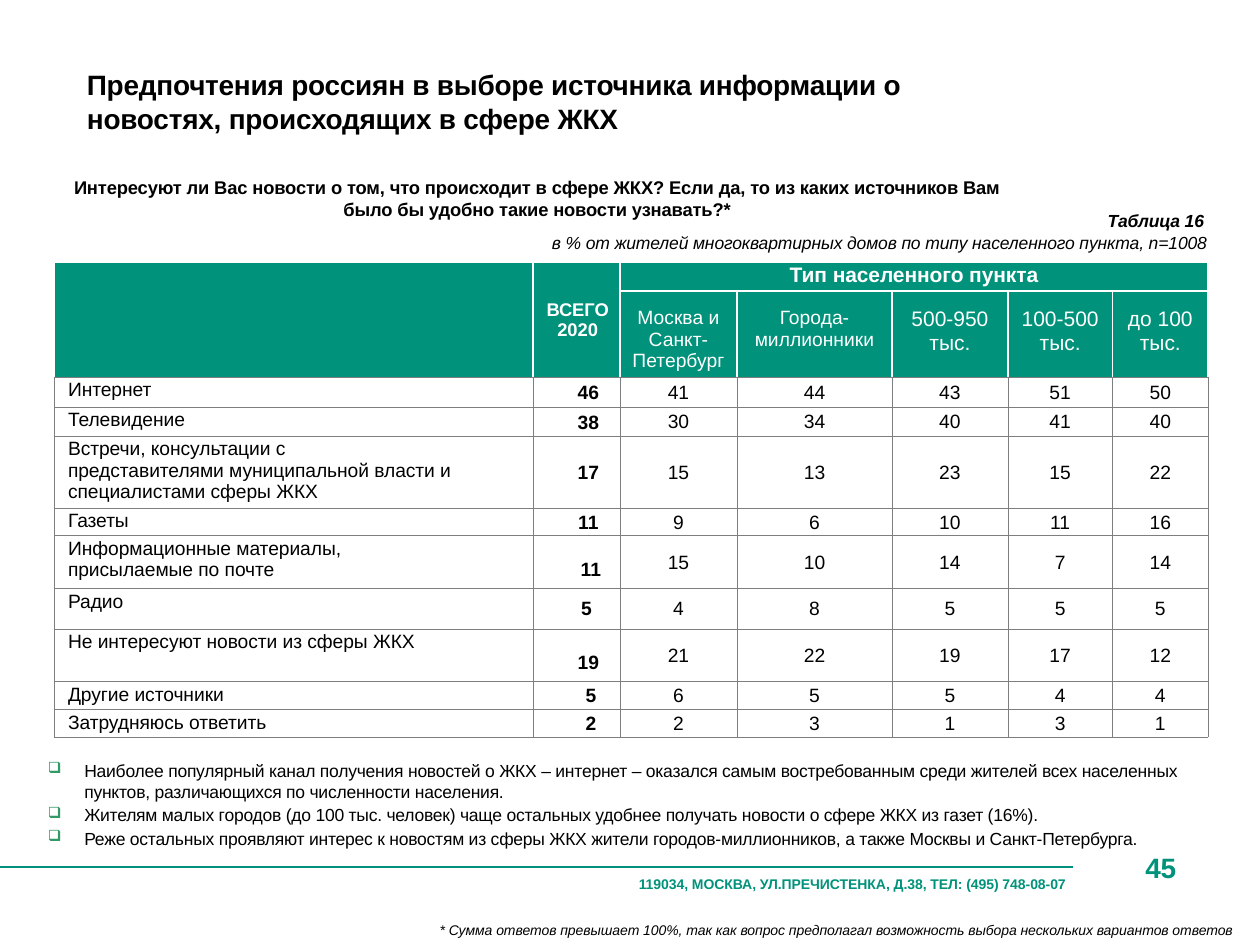
from dataclasses import dataclass

from lxml.etree import SubElement
from pptx import Presentation
from pptx.dml.color import RGBColor
from pptx.enum.shapes import MSO_CONNECTOR
from pptx.enum.text import MSO_ANCHOR, PP_ALIGN
from pptx.oxml.ns import qn
from pptx.util import Inches, Pt

GREEN, WHITE, BLACK, GREY = "00927A", "FFFFFF", "000000", "7E7E7E"


@dataclass
class Look:
    size: float
    color: str = BLACK
    bold: bool = False
    italic: bool = False
    center: bool = False
    indent: float = 0.01
    track: int = 0  # hundredths of a point


@dataclass
class Box:
    left: float
    top: float
    width: float
    height: float
    text: str
    look: Look
    inset: float = 0


@dataclass
class Row:
    label: str
    total: int
    shares: list[int]
    height: float
    drop: float = 0.02  # top inset of the total
    shift: float = 0.19  # left indent of the total
    right: float = 0  # right inset of the label


BOXES = [
    Box(0.68, 0.51, 6.61, 0.56,
        "Предпочтения россиян в выборе источника информации о "
        "новостях, происходящих в сфере ЖКХ",
        Look(16, bold=True, track=-10), 0.03),
    Box(9.05, 6.75, 0.33, 0.28, "45",
        Look(16, GREEN, bold=True, indent=0.04, track=-10)),
    Box(5.06, 6.95, 3.48, 0.15,
        "119034, МОСКВА, УЛ.ПРЕЧИСТЕНКА, Д.38, ТЕЛ: (495) 748-08-07",
        Look(8, GREEN, bold=True, track=-5)),
    Box(3.48, 7.31, 6.43, 0.15,
        "* Сумма ответов превышает 100%, так как вопрос предполагал "
        "возможность выбора нескольких вариантов ответов",
        Look(8, italic=True, track=-5)),
    Box(8.78, 1.66, 0.81, 0.18, "Таблица 16",
        Look(10, bold=True, italic=True, track=-5), 0.01),
    Box(4.37, 1.83, 5.22, 0.18,
        "в % от жителей многоквартирных домов по типу населенного пункта, n=1008",
        Look(10, italic=True, track=-5), 0.01),
    Box(0.5, 1.37, 7.53, 0.38,
        "Интересуют ли Вас новости о том, что происходит в сфере ЖКХ? "
        "Если да, то из каких источников Вам\n"
        "было бы удобно такие новости узнавать?*",
        Look(10.5, bold=True, center=True, indent=0, track=-5), 0.03),
]

NOTES = Box(
    0.36, 6.02, 9.13, 0.9,
    "Наиболее популярный канал получения новостей о ЖКХ – интернет – оказался "
    "самым востребованным среди жителей всех населенных пунктов, "
    "различающихся по численности населения.\n"
    "Жителям малых городов (до 100 тыс. человек) чаще остальных удобнее "
    "получать новости о сфере ЖКХ из газет (16%).\n"
    "Реже остальных проявляют интерес к новостям из сферы ЖКХ жители "
    "городов-миллионников, а также Москвы и Санкт-Петербурга.",
    Look(10, indent=0.31, track=-10), 0.01)

WIDTHS = [3.8, 0.69, 0.93, 1.23, 0.92, 0.83, 0.76]
HEADS = [0.23, 0.68]
TOWNS = [("Москва и Санкт-Петербург", 11), ("Города-миллионники", 11),
         ("500-950 тыс.", 12), ("100-500 тыс.", 12), ("до 100 тыс.", 12)]
ROWS = [
    Row("Интернет", 46, [41, 44, 43, 51, 50], 0.24),
    Row("Телевидение", 38, [30, 34, 40, 41, 40], 0.23),
    Row("Встречи, консультации с\nпредставителями муниципальной власти и "
        "специалистами сферы ЖКХ", 17, [15, 13, 23, 15, 22], 0.57),
    Row("Газеты", 11, [9, 6, 10, 11, 16], 0.22, 0.01),
    Row("Информационные материалы, присылаемые по почте", 11,
        [15, 10, 14, 7, 14], 0.42, 0.12, 0.23, 1),
    Row("Радио", 5, [4, 8, 5, 5, 5], 0.32, 0, 0.16),
    Row("Не интересуют новости из сферы ЖКХ", 19,
        [21, 22, 19, 17, 12], 0.42, 0.12),
    Row("Другие источники", 5, [6, 5, 5, 4, 4], 0.22, 0.01, 0.23),
    Row("Затрудняюсь ответить", 2, [2, 3, 1, 3, 1], 0.22, 0.01, 0.23),
]


def paint(target, color: str) -> None:
    """Colour a fill, or a line's fill, solid."""
    target.solid()
    target.fore_color.rgb = RGBColor.from_string(color)


def mark(para) -> None:
    """Give a paragraph the green box bullet."""
    props = para._p.get_or_add_pPr()
    props.set("indent", str(Inches(-0.29)))
    tint = SubElement(props, qn("a:buClr"))
    SubElement(tint, qn("a:srgbClr"), val="339966")
    SubElement(props, qn("a:buSzPct"), val="88000")
    SubElement(props, qn("a:buChar"), char="❑")


def write(frame, text: str, look: Look, bullet: bool = False) -> None:
    frame.word_wrap = True
    frame.text = text
    for para in frame.paragraphs:
        para._p.get_or_add_pPr().set("marL", str(Inches(look.indent)))
        if bullet:
            mark(para)
        para.alignment = PP_ALIGN.CENTER if look.center else PP_ALIGN.LEFT
        font = para.font
        font.name, font.size = "Arial", Pt(look.size)
        font.bold, font.italic = look.bold, look.italic
        paint(font.fill, look.color)
        for run in para.runs:
            run._r.get_or_add_rPr().set("spc", str(look.track))


def pad(item, left: float, top: float, right: float) -> None:
    item.margin_left, item.margin_top = Inches(left), Inches(top)
    item.margin_right, item.margin_bottom = Inches(right), 0


def place(slide, box: Box, bullet: bool = False):
    spot = map(Inches, (box.left, box.top, box.width, box.height))
    frame = slide.shapes.add_textbox(*spot).text_frame
    pad(frame, 0, box.inset, 0)
    write(frame, box.text, box.look, bullet)
    return frame


def edge(cell, color: str, width: float, low: str = "") -> None:
    """Draw the four borders; low is another colour for a hairline below."""
    props = cell._tc.get_or_add_tcPr()
    for side in "LRTB":
        thin = side == "B" and low
        line = SubElement(props, qn(f"a:ln{side}"),
                          w=str(Pt(0.25 if thin else width)))
        fill = SubElement(line, qn("a:solidFill"))
        SubElement(fill, qn("a:srgbClr"), val=low if thin else color)


def put(cell, text: str, look: Look, top: float, side: float = 0,
        right: float = 0, middle: bool = True) -> None:
    pad(cell, side, top, right or side)
    cell.vertical_anchor = MSO_ANCHOR.MIDDLE if middle else MSO_ANCHOR.TOP
    write(cell.text_frame, text, look)


def fill_head(table) -> None:
    for r in range(len(HEADS)):
        for c in range(len(WIDTHS)):
            cell = table.cell(r, c)
            edge(cell, WHITE, 1, "" if r == 0 and c > 1 else GREY)
            paint(cell.fill, GREEN)
    for c in (0, 1):
        table.cell(0, c).merge(table.cell(1, c))
    table.cell(0, 2).merge(table.cell(0, 6))
    put(table.cell(0, 1), "ВСЕГО\n2020",
        Look(10.5, WHITE, bold=True, center=True, indent=0.02), 0.01)
    put(table.cell(0, 2), "Тип населенного пункта",
        Look(12, WHITE, bold=True, center=True, indent=0, track=-5),
        0.01, middle=False)
    for c, (town, size) in enumerate(TOWNS, 2):
        put(table.cell(1, c), town,
            Look(size, WHITE, center=True, indent=0), 0.13, middle=False)


def fill_body(table) -> None:
    for r, row in enumerate(ROWS, len(HEADS)):
        cells = table.rows[r].cells
        for cell in cells:
            edge(cell, GREY, 0.25)
            cell.fill.background()
        label, total, *rest = cells
        put(label, row.label, Look(11, indent=0.11, track=-5), 0.02,
            right=row.right, middle=False)
        put(total, str(row.total),
            Look(11, bold=True, center=True, indent=row.shift), row.drop)
        for cell, share in zip(rest, row.shares):
            put(cell, str(share), Look(11, center=True, indent=0), 0.01, 0.01)


def add_grid(slide) -> None:
    highs = HEADS + [row.height for row in ROWS]
    table = slide.shapes.add_table(
        len(highs), len(WIDTHS), Inches(0.43), Inches(2.08),
        Inches(sum(WIDTHS)), Inches(sum(highs))).table
    table.first_row = table.horz_banding = False
    for col, width in zip(table.columns, WIDTHS):
        col.width = Inches(width)
    for row, high in zip(table.rows, highs):
        row.height = Inches(high)
    fill_head(table)
    fill_body(table)


def main() -> None:
    deck = Presentation()
    deck.slide_width, deck.slide_height = Inches(10), Inches(7.5)
    slide = deck.slides.add_slide(deck.slide_layouts[6])
    rule = slide.shapes.add_connector(
        MSO_CONNECTOR.STRAIGHT, 0, Inches(6.88), Inches(8.52), Inches(6.88))
    paint(rule.line.fill, "00907C")
    rule.line.width = Pt(1.2)
    SubElement(rule._element.spPr, qn("a:effectLst"))
    for box in BOXES:
        place(slide, box)
    notes = place(slide, NOTES, bullet=True)
    for para in notes.paragraphs[1:]:
        para.space_before = Pt(1.4)
    add_grid(slide)
    deck.save("out.pptx")


if __name__ == "__main__":
    main()
